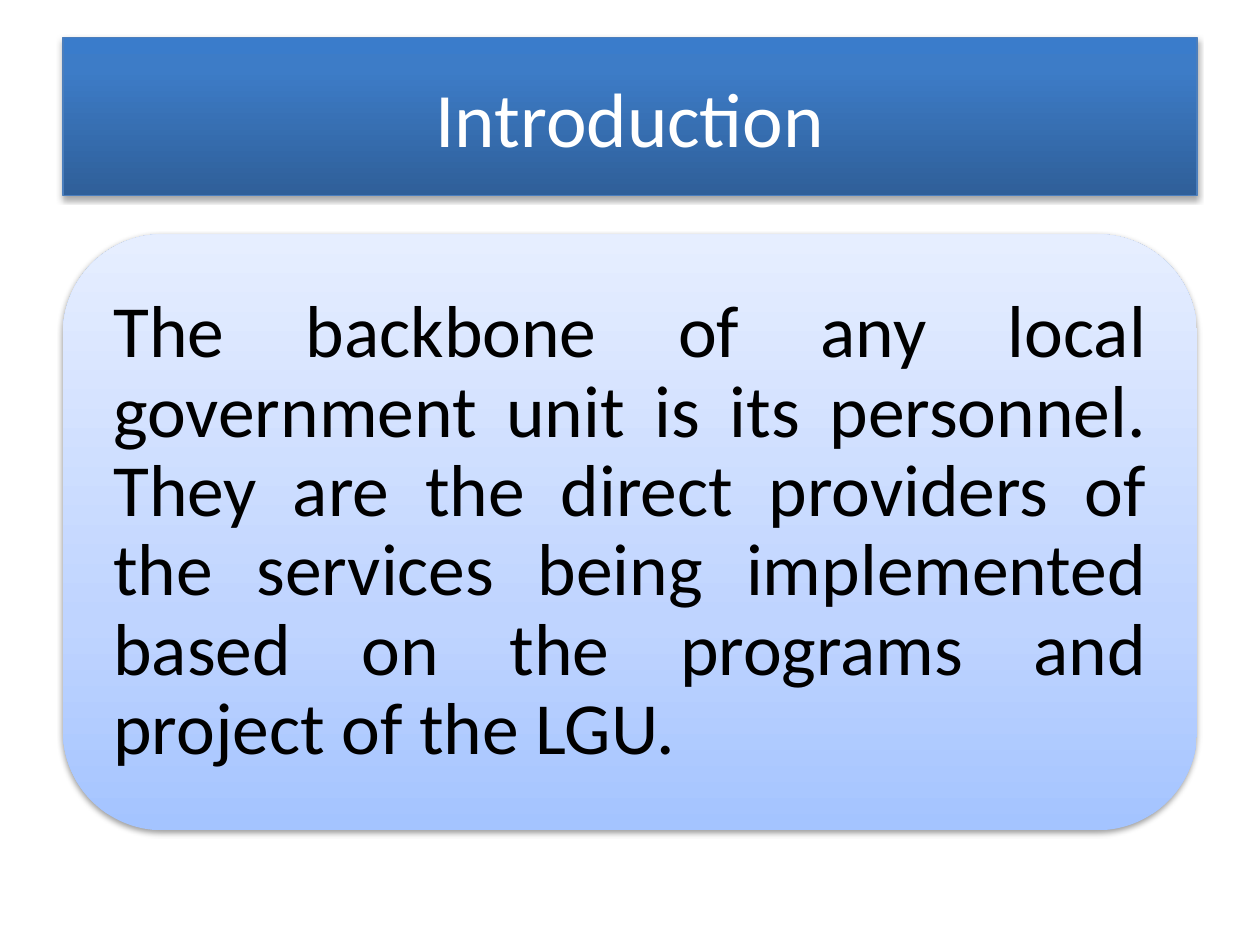
"""Build the introduction slide: a title banner above a rounded statement panel."""
from dataclasses import dataclass

from lxml import etree
from pptx import Presentation
from pptx.dml.color import RGBColor
from pptx.enum.shapes import MSO_SHAPE
from pptx.enum.text import MSO_ANCHOR, PP_ALIGN
from pptx.oxml.ns import qn
from pptx.util import Inches, Pt

ROUNDED = MSO_SHAPE.ROUNDED_RECTANGLE
MIDDLE = MSO_ANCHOR.MIDDLE
CENTER, JUSTIFY = PP_ALIGN.CENTER, PP_ALIGN.JUSTIFY
TITLE_ONLY = 5

STATEMENT = (
    "The backbone of any local government unit is its personnel. "
    "They are the direct providers of the services being implemented "
    "based on the programs and project of the LGU."
)


@dataclass(frozen=True)
class Theme:
    """Colours, gradient stops from bottom to top, and type sizes."""

    font: str = "Calibri"
    title_size: int = 44
    body_size: int = 42
    title_color: str = "FFFFFF"
    body_color: str = "000000"
    shadow_color: str = "000000"
    banner_line: str = "4B7EBC"
    banner_stops: tuple = ((0, "2F5F99"), (80, "3D7CC7"), (100, "3A7CCB"))
    panel_stops: tuple = ((0, "A4C4FF"), (35, "BFD4FF"), (100, "E6EEFF"))


THEME = Theme()


def add_color(parent, color):
    """Append an RGB colour element and return it."""
    return etree.SubElement(parent, qn("a:srgbClr"), val=color)


def fill_gradient(shape, stops):
    """Fill a shape with a vertical gradient that rises through the stops."""
    shape.fill.gradient()
    shape.fill.gradient_angle = 90
    stop_list = shape.element.spPr.find(".//" + qn("a:gsLst"))
    for default_stop in list(stop_list):
        stop_list.remove(default_stop)
    for percent, color in stops:
        stop = etree.SubElement(stop_list, qn("a:gs"), pos=str(percent * 1000))
        add_color(stop, color)


def drop_shadow(shape, blur, distance, opacity):
    """Give a shape a soft shadow that falls straight down."""
    shape.shadow.inherit = False
    effects = shape.element.spPr.find(qn("a:effectLst"))
    shadow = etree.SubElement(
        effects, qn("a:outerShdw"), blurRad=str(Pt(blur)), dist=str(Pt(distance)),
        dir="5400000", rotWithShape="0")
    color = add_color(shadow, THEME.shadow_color)
    etree.SubElement(color, qn("a:alpha"), val=str(opacity * 1000))


def write_text(shape, text, *, size, color, align, inset=0.1, line_spacing=None,
               space_after=None):
    """Write one formatted paragraph, centred vertically in its shape."""
    frame = shape.text_frame
    frame.word_wrap = True
    frame.vertical_anchor = MIDDLE
    frame.margin_left = frame.margin_right = Inches(inset)
    frame.margin_top = frame.margin_bottom = Inches(min(inset, 0.17))
    paragraph = frame.paragraphs[0]
    paragraph.alignment = align
    paragraph.line_spacing = line_spacing
    paragraph.space_after = space_after
    run = paragraph.add_run()
    run.text = text
    run.font.name = THEME.font
    run.font.size = Pt(size)
    run.font.color.rgb = RGBColor.from_string(color)


def add_banner(slide, title):
    """Turn the title placeholder into a gradient banner."""
    banner = slide.shapes.title
    banner.left, banner.top = Inches(0.5), Inches(0.3)
    banner.width, banner.height = Inches(9), Inches(1.25)
    fill_gradient(banner, THEME.banner_stops)
    banner.line.color.rgb = RGBColor.from_string(THEME.banner_line)
    banner.line.width = Pt(0.75)
    drop_shadow(banner, blur=3.1, distance=1.8, opacity=35)
    write_text(banner, title, size=THEME.title_size, color=THEME.title_color,
               align=CENTER)


def add_statement(slide, statement):
    """Group a rounded panel with the statement set inside it."""
    left, top, width, height, pad = 0.5, 1.86, 9, 4.73, 0.23
    group = slide.shapes.add_group_shape()
    panel = group.shapes.add_shape(
        ROUNDED, Inches(left), Inches(top), Inches(width), Inches(height))
    fill_gradient(panel, THEME.panel_stops)
    panel.line.fill.background()
    drop_shadow(panel, blur=3.1, distance=1.6, opacity=38)
    body = group.shapes.add_textbox(
        Inches(left + pad), Inches(top + pad),
        Inches(width - 2 * pad), Inches(height - 2 * pad))
    write_text(body, statement, size=THEME.body_size, color=THEME.body_color,
               align=JUSTIFY, inset=0.17, line_spacing=0.9, space_after=Pt(15))


def main():
    """Assemble and save the slide."""
    presentation = Presentation()
    presentation.slide_width, presentation.slide_height = Inches(10), Inches(7.5)
    slide = presentation.slides.add_slide(presentation.slide_layouts[TITLE_ONLY])
    add_banner(slide, "Introduction")
    add_statement(slide, STATEMENT)
    presentation.save("out.pptx")


if __name__ == "__main__":
    main()
